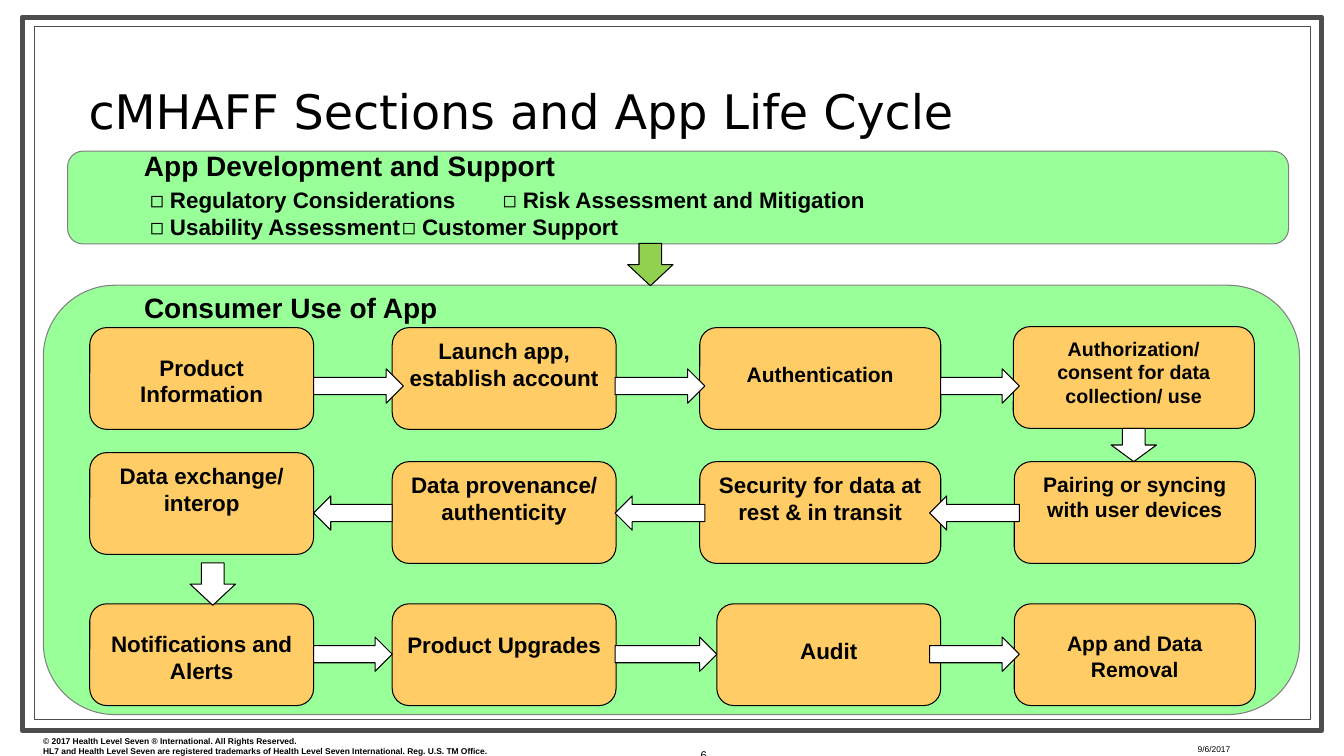
from dataclasses import dataclass

from lxml import etree
from pptx import Presentation
from pptx import util as u
from pptx.dml.color import RGBColor
from pptx.enum import shapes, text
from pptx.oxml.ns import qn


@dataclass(frozen=True)
class Theme:
    black: str = "000000"
    white: str = "FFFFFF"
    frame: str = "4D4D4D"
    panel: str = "99FF99"
    panel_line: str = "808080"
    card: str = "FFCC66"
    lead_arrow: str = "92D050"
    body_font: str = "Arial"
    title_font: str = "DejaVu Sans"
    title: float = 34
    heading: float = 20
    label: float = 16
    label_small: float = 15
    label_tiny: float = 14
    number: float = 8
    footer: float = 6
    hairline: float = 0.75
    frame_line: float = 3.5


def style_text(para, line, size, font, bold=False):
    """Put one formatted line in a paragraph."""
    span = para.add_run()
    span.text = line
    span.font.size = u.Pt(size)
    span.font.name = font
    span.font.bold = bold
    span.font.color.rgb = RGBColor.from_string(Theme.black)


def write(box, lines, size, font, bold=False, align=None, anchor=text.MSO_ANCHOR.TOP,
          top=0.05, spacing=None):
    """Fill a shape with paragraphs that share one format."""
    frame = box.text_frame
    frame.word_wrap = True
    frame.vertical_anchor = anchor
    frame.margin_top = u.Inches(top)
    for index, line in enumerate(lines):
        para = frame.paragraphs[0] if index == 0 else frame.add_paragraph()
        para.alignment = align
        para.line_spacing = spacing
        style_text(para, line, size, font, bold)
    return frame


class Sheet:
    def __init__(self, page, theme):
        self.page = page
        self.theme = theme

    def shape(self, kind, place, fill, line, weight=Theme.hairline):
        box = self.page.shapes.add_shape(kind, *map(u.Inches, place))
        box.shadow.inherit = False
        box.fill.solid()
        box.fill.fore_color.rgb = RGBColor.from_string(fill)
        box.line.color.rgb = RGBColor.from_string(line)
        box.line.width = u.Pt(weight)
        return box

    def frame(self, place, weight):
        self.shape(shapes.MSO_SHAPE.RECTANGLE, place, self.theme.white, self.theme.frame, weight)

    def panel(self, place):
        self.shape(shapes.MSO_SHAPE.ROUNDED_RECTANGLE, place, self.theme.panel,
                   self.theme.panel_line)

    def card(self, place, label, size, top):
        box = self.shape(shapes.MSO_SHAPE.ROUNDED_RECTANGLE, place, self.theme.card,
                         self.theme.black)
        write(box, [label], size, self.theme.body_font, bold=True,
              align=text.PP_ALIGN.CENTER, top=top)

    def arrow(self, place, turn=0, fill=Theme.white):
        box = self.shape(shapes.MSO_SHAPE.RIGHT_ARROW, place, fill, self.theme.black)
        box.rotation = turn

    def label(self, place, lines, size, font=Theme.body_font, **style):
        box = self.page.shapes.add_textbox(*map(u.Inches, place))
        return write(box, lines, size, font, **style)

    def two_columns(self, frame, rows, indent, tab):
        """Add one paragraph per row, split in columns by a tab stop."""
        for index, row in enumerate(rows):
            para = frame.add_paragraph()
            props = para._p.get_or_add_pPr()
            props.set("marL", str(u.Inches(indent)))
            props.set("indent", "0")
            stops = etree.SubElement(props, qn("a:tabLst"))
            etree.SubElement(stops, qn("a:tab"), pos=str(u.Inches(tab)), algn="l")
            para.space_before = u.Pt(0 if index else 3.2)
            style_text(para, "\t".join(row), self.theme.label, self.theme.body_font, bold=True)


# Card columns as (left, width), card rows and arrow rows as tops
COLUMNS = [(0.89, 2.22), (3.89, 2.22), (6.94, 2.39), (10.06, 2.39)]
CARD_ROWS = [3.25, 4.58, 5.99]
CARD_HEIGHT = 1.01
ARROW_ROWS = [(3.66, 0), (4.92, 180), (6.32, 0)]
ARROW_HEIGHT = 0.34

# Each card: label, type size, top margin
CARDS = [
    [("Product Information", Theme.label, 0.21),
     ("Launch app, establish account", Theme.label, 0.05),
     ("Authentication", Theme.label_small, 0.29),
     ("Authorization/ consent for data collection/ use", Theme.label_tiny, 0.05)],
    [("Data exchange/ interop", Theme.label, 0.05),
     ("Data provenance/ authenticity", Theme.label, 0.05),
     ("Security for data at rest & in transit", Theme.label, 0.05),
     ("Pairing or syncing with user devices", Theme.label_small, 0.05)],
    [("Notifications and Alerts", Theme.label, 0.21),
     ("Product Upgrades", Theme.label, 0.22),
     ("Audit", Theme.label, 0.28),
     ("App and Data Removal", Theme.label_small, 0.22)],
]
# Cards that leave the grid: (row, column) to left, top, width
MOVED = {(0, 3): (10.05, 3.24, 2.39), (1, 0): (0.89, 4.49, 2.22), (2, 2): (7.11, 5.99, 2.22)}

# Each row of arrows: left, width
ARROWS = [
    [(3.11, 0.89), (6.1, 0.89), (9.33, 0.78)],
    [(3.11, 0.78), (6.1, 0.89), (9.22, 0.89)],
    [(3.11, 0.78), (6.1, 1.01), (9.22, 0.89)],
]


def main():
    theme = Theme()
    deck = Presentation()
    deck.slide_width, deck.slide_height = u.Inches(13.33), u.Inches(7.5)
    sheet = Sheet(deck.slides.add_slide(deck.slide_layouts[6]), theme)

    # Double frame and footer
    sheet.frame((0.22, 0.17, 12.89, 7.08), theme.frame_line)
    sheet.frame((0.34, 0.26, 12.66, 6.88), theme.hairline)
    sheet.label((0.33, 7.25, 6.44, 0.3), [
        "© 2017 Health Level Seven ® International. All Rights Reserved.",
        "HL7 and Health Level Seven are registered trademarks of Health Level Seven "
        "International. Reg. U.S. TM Office."], theme.footer, bold=True)
    sheet.label((11.78, 7.33, 1.22, 0.17), ["9/6/2017"], theme.footer)
    sheet.label((6.33, 7.23, 0.78, 0.52), ["6"], theme.number,
                align=text.PP_ALIGN.RIGHT, anchor=text.MSO_ANCHOR.MIDDLE)

    # Panels, title and headings
    sheet.panel((0.43, 2.83, 12.46, 4.26))
    sheet.panel((0.67, 1.5, 12.11, 0.92))
    sheet.label((0.78, 0.52, 11.89, 0.9), ["cMHAFF Sections and App Life Cycle"],
                theme.title, theme.title_font, anchor=text.MSO_ANCHOR.BOTTOM, spacing=0.8)
    support = sheet.label((1.33, 1.42, 11, 0.96), ["App Development and Support"],
                          theme.heading, bold=True)
    sheet.two_columns(support, [
        ("◻ Regulatory Considerations", "◻ Risk Assessment and Mitigation"),
        ("◻ Usability Assessment", "◻ Customer Support")], indent=0.06, tab=3.38)
    sheet.label((1.33, 2.83, 11.89, 0.5), ["Consumer Use of App"], theme.heading, bold=True)

    # Life cycle cards
    for row, cards in enumerate(CARDS):
        for column, (label, size, top) in enumerate(cards):
            left, width = COLUMNS[column]
            left, y, width = MOVED.get((row, column), (left, CARD_ROWS[row], width))
            sheet.card((left, y, width, CARD_HEIGHT), label, size, top)

    # Arrows along the rows, then between them
    for (y, turn), arrows in zip(ARROW_ROWS, ARROWS):
        for left, width in arrows:
            sheet.arrow((left, y, width, ARROW_HEIGHT), turn)
    sheet.arrow((1.9, 5.57, 0.42, 0.45), 90)
    sheet.arrow((11.08, 4.19, 0.33, 0.45), 90)
    sheet.arrow((6.24, 2.4, 0.42, 0.45), 90, theme.lead_arrow)

    deck.save("out.pptx")


if __name__ == "__main__":
    main()
